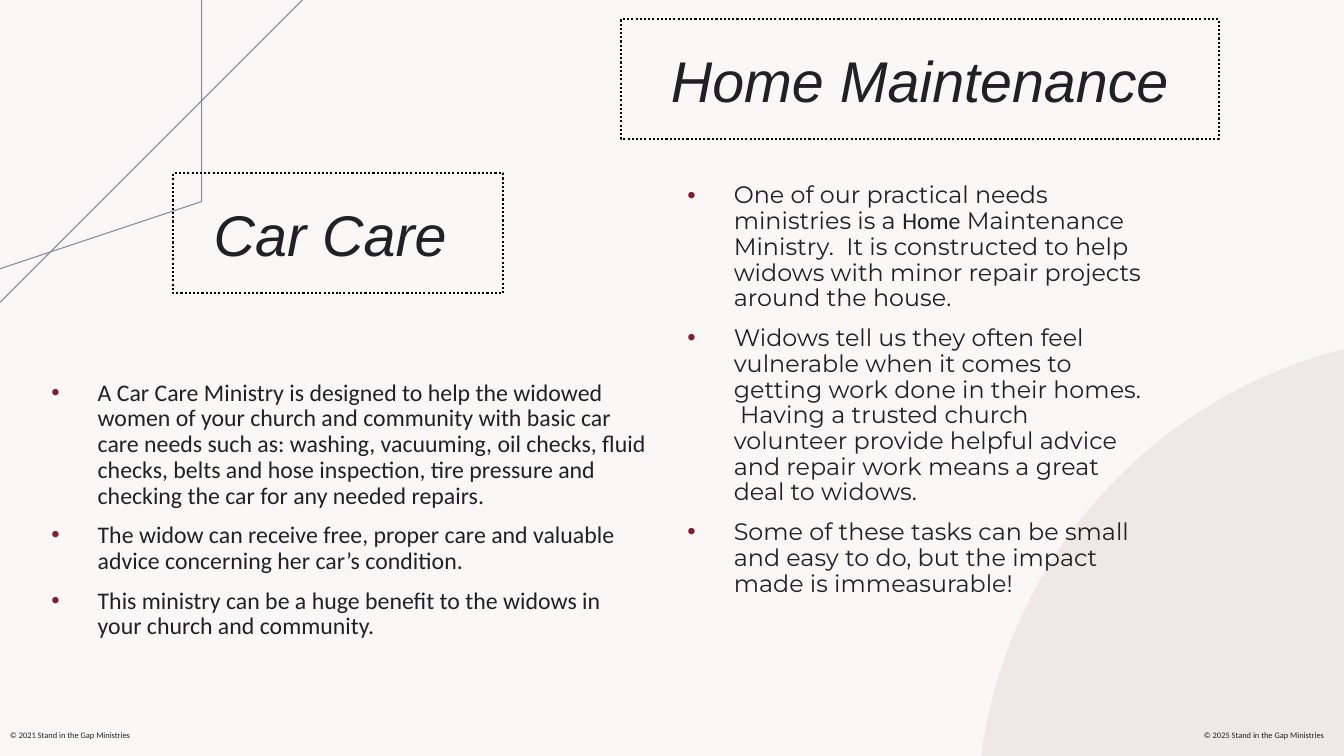
from lxml.etree import SubElement
from pptx import Presentation
from pptx.dml.color import RGBColor
from pptx.enum.dml import MSO_LINE
from pptx.enum.shapes import MSO_SHAPE
from pptx.enum.text import MSO_ANCHOR, PP_ALIGN
from pptx.oxml.ns import qn
from pptx.util import Inches, Pt

BACKGROUND = RGBColor(0xF9, 0xF8, 0xF7)
BLUSH = RGBColor(0xEF, 0xE8, 0xE5)
SLATE = RGBColor(0x86, 0x85, 0x9D)
INK = RGBColor(0x20, 0x20, 0x26)
BLACK = RGBColor(0, 0, 0)
BULLET_RED = RGBColor(0x88, 0x1B, 0x2E)

CAR_CARE = [
    [("A Car Care Ministry is designed to help the widowed women of your church and "
      "community with basic car care needs such as: washing, vacuuming, oil checks, "
      "fluid checks, belts and hose inspection, tire pressure and checking the car "
      "for any needed repairs.", "Calibri")],
    [("The widow can receive free, proper care and valuable advice concerning her "
      "car’s condition.", "Calibri")],
    [("This ministry can be a huge benefit to the widows in your church and "
      "community.", "Calibri")],
]
HOME_MAINTENANCE = [
    [("One of our practical needs ministries is a ", "Montserrat"),
     ("Home", "Calibri"),
     (" Maintenance Ministry.  It is constructed to help widows with minor repair "
      "projects around the house.", "Montserrat")],
    [("Widows tell us they often feel vulnerable when it comes to getting work done "
      "in their homes.  Having a trusted church volunteer provide helpful advice and "
      "repair work means a great deal to widows.", "Montserrat")],
    [("Some of these tasks can be small and easy to do, but the impact made is "
      "immeasurable!", "Montserrat")],
]


def add_circle(slide, left, top, diameter):
    shape = slide.shapes.add_shape(MSO_SHAPE.OVAL, Inches(left), Inches(top),
                                   Inches(diameter), Inches(diameter))
    shape.shadow.inherit = False
    shape.fill.solid()
    shape.fill.fore_color.rgb = BLUSH
    shape.line.fill.background()


def add_bent_line(slide, points):
    start, *rest = points
    builder = slide.shapes.build_freeform(*start, scale=Inches(1))
    builder.add_line_segments(rest, close=False)
    shape = builder.convert_to_shape()
    shape.shadow.inherit = False
    shape.fill.background()
    shape.line.color.rgb = SLATE
    shape.line.width = Pt(0.75)


def set_frame(frame, anchor, top_inset, bottom_inset):
    frame.word_wrap = True
    frame.vertical_anchor = anchor
    frame.margin_left = frame.margin_right = Inches(0.1)
    frame.margin_top, frame.margin_bottom = Inches(top_inset), Inches(bottom_inset)


def add_run(paragraph, text, font_name, size, italic=False):
    run = paragraph.add_run()
    run.text = text
    run.font.name = font_name
    run.font.size = Pt(size)
    run.font.italic = italic
    run.font.color.rgb = INK


def add_heading(slide, left, top, width, text):
    shape = slide.shapes.add_shape(MSO_SHAPE.RECTANGLE, Inches(left), Inches(top),
                                   Inches(width), Inches(1.19))
    shape.shadow.inherit = False
    shape.fill.background()
    shape.line.color.rgb = BLACK
    shape.line.width = Pt(1.5)
    shape.line.dash_style = MSO_LINE.ROUND_DOT
    set_frame(shape.text_frame, MSO_ANCHOR.MIDDLE, 0.1, 0.1)
    paragraph = shape.text_frame.paragraphs[0]
    paragraph.alignment = PP_ALIGN.CENTER
    add_run(paragraph, text, "Arial", 41, italic=True)


def add_bullet(paragraph):
    properties = paragraph._p.get_or_add_pPr()
    properties.set("marL", str(Inches(0.67)))
    properties.set("indent", str(Inches(-0.46)))
    color = SubElement(properties, qn("a:buClr"))
    SubElement(color, qn("a:srgbClr"), val=str(BULLET_RED))
    SubElement(properties, qn("a:buFont"), typeface="Arial")
    SubElement(properties, qn("a:buChar"), char="•")


def add_bullet_list(slide, box, items, anchor, top_inset, bottom_inset):
    frame = slide.shapes.add_textbox(*map(Inches, box)).text_frame
    set_frame(frame, anchor, top_inset, bottom_inset)
    for index, runs in enumerate(items):
        paragraph = frame.add_paragraph() if index else frame.paragraphs[0]
        add_bullet(paragraph)
        paragraph.line_spacing = 0.9
        paragraph.space_before = Pt(10 if index else 0)
        for text, font_name in runs:
            add_run(paragraph, text, font_name, 17)


def add_copyright(slide, left, text, alignment):
    frame = slide.shapes.add_textbox(Inches(left), Inches(7.18),
                                     Inches(2.87), Inches(0.23)).text_frame
    set_frame(frame, MSO_ANCHOR.MIDDLE, 0.05, 0.05)
    paragraph = frame.paragraphs[0]
    paragraph.alignment = alignment
    add_run(paragraph, text, "Calibri", 6)


def main():
    presentation = Presentation()
    presentation.slide_width = Inches(13.33)
    presentation.slide_height = Inches(7.5)
    slide = presentation.slides.add_slide(presentation.slide_layouts[6])
    slide.background.fill.solid()
    slide.background.fill.fore_color.rgb = BACKGROUND

    add_circle(slide, 9.69, 3.32, 9.61)
    add_bent_line(slide, [(-0.15, 3.2), (3.1, 0), (2.94, -1.08)])
    add_bent_line(slide, [(-1.19, 3.28), (1.8, 1.86), (2.03, -0.38)])

    add_heading(slide, 1.72, 1.72, 3.27, "Car Care ")
    add_bullet_list(slide, (0.2, 3.53, 6.31, 2.84), CAR_CARE,
                    MSO_ANCHOR.BOTTOM, 0.05, 0.02)
    add_copyright(slide, 0, "© 2021 Stand in the Gap Ministries", PP_ALIGN.LEFT)

    add_bullet_list(slide, (6.51, 1.72, 4.94, 3.63), HOME_MAINTENANCE,
                    MSO_ANCHOR.TOP, 0.1, 0.1)
    add_heading(slide, 6.16, 0.19, 5.93, "Home Maintenance")
    add_copyright(slide, 10.36, "© 2025 Stand in the Gap Ministries", PP_ALIGN.RIGHT)

    presentation.save("out.pptx")


if __name__ == "__main__":
    main()
